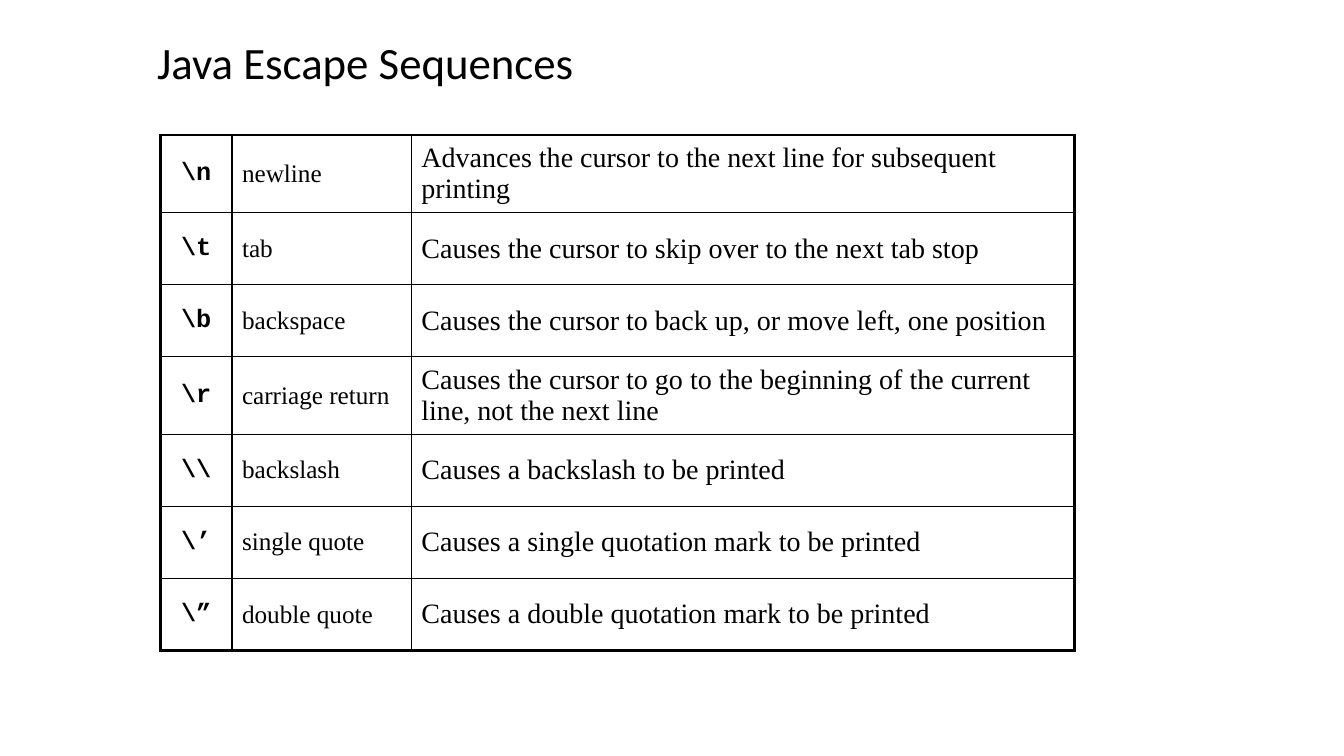
import pptx
import pptx.dml.color
import pptx.enum.text
import pptx.oxml.ns
import pptx.util
from lxml import etree

BLACK = pptx.dml.color.RGBColor(0x00, 0x00, 0x00)
SLIDE_WIDTH = pptx.util.Inches(13.33)
SLIDE_HEIGHT = pptx.util.Inches(7.5)
MIDDLE = pptx.enum.text.MSO_ANCHOR.MIDDLE
CENTER = pptx.enum.text.PP_ALIGN.CENTER

OUTER_LINE = 2.25
INNER_LINE = 1
COLUMN_SHARES = (5.33, 13.35, 49.35)
TALL_ROW = 10.27
ROW = 9.53

COLUMN_FORMATS = (
    {"font": "Courier New", "size": 18, "bold": True, "align": CENTER},
    {"font": "Times New Roman", "size": 18},
    {"font": "Times New Roman", "size": 20},
)

ESCAPES = (
    (TALL_ROW, r"\n", "newline", "Advances the cursor to the next line for subsequent printing"),
    (ROW, r"\t", "tab", "Causes the cursor to skip over to the next tab stop"),
    (ROW, r"\b", "backspace", "Causes the cursor to back up, or move left, one position"),
    (TALL_ROW, r"\r", "carriage return",
     "Causes the cursor to go to the beginning of the current line, not the next line"),
    (ROW, r"\\", "backslash", "Causes a backslash to be printed"),
    (ROW, r"\’", "single quote", "Causes a single quotation mark to be printed"),
    (ROW, r"\”", "double quote", "Causes a double quotation mark to be printed"),
)


def across(percent):
    """Return a share of the slide's width."""
    return round(SLIDE_WIDTH * percent / 100)


def down(percent):
    """Return a share of the slide's height."""
    return round(SLIDE_HEIGHT * percent / 100)


def write(frame, text, font, size, bold=False, align=None, spacing=None):
    """Put one formatted paragraph into a text frame."""
    frame.word_wrap = True
    paragraph = frame.paragraphs[0]
    paragraph.alignment = align
    paragraph.line_spacing = spacing
    run = paragraph.add_run()
    run.text = text
    run.font.name = font
    run.font.size = pptx.util.Pt(size)
    run.font.bold = bold
    run.font.color.rgb = BLACK


def rule_cell(cell, widths):
    """Draw the left, right, top and bottom borders of a cell."""
    properties = cell._tc.get_or_add_tcPr()
    for side, width in zip("LRTB", widths):
        line = etree.SubElement(properties, pptx.oxml.ns.qn(f"a:ln{side}"),
                                w=str(pptx.util.Pt(width)))
        fill = etree.SubElement(line, pptx.oxml.ns.qn("a:solidFill"))
        etree.SubElement(fill, pptx.oxml.ns.qn("a:srgbClr"), val=str(BLACK))


def add_heading(slide):
    """Add the slide's heading."""
    heading = slide.shapes.add_textbox(across(10.95), down(1.33), across(43.73), down(14.53))
    heading.text_frame.vertical_anchor = MIDDLE
    write(heading.text_frame, "Java Escape Sequences", font="Calibri", size=32, spacing=0.9)


def add_escape_table(slide):
    """Add the ruled table of escape sequences."""
    row_shares = [escape[0] for escape in ESCAPES]
    last_row, last_column = len(ESCAPES) - 1, len(COLUMN_SHARES) - 1
    escapes = slide.shapes.add_table(
        len(ESCAPES), len(COLUMN_SHARES), across(11.93), down(17.87),
        across(sum(COLUMN_SHARES)), down(sum(row_shares))).table
    escapes.first_row = escapes.horz_banding = False
    for column, share in zip(escapes.columns, COLUMN_SHARES):
        column.width = across(share)
    for r, (share, *texts) in enumerate(ESCAPES):
        escapes.rows[r].height = down(share)
        for c, text in enumerate(texts):
            cell = escapes.cell(r, c)
            edges = (c == 0, c == last_column, r == 0, r == last_row)
            rule_cell(cell, [OUTER_LINE if edge else INNER_LINE for edge in edges])
            cell.fill.background()
            cell.vertical_anchor = MIDDLE
            write(cell.text_frame, text, **COLUMN_FORMATS[c])


def main():
    """Build and save the slide."""
    deck = pptx.Presentation()
    deck.slide_width, deck.slide_height = SLIDE_WIDTH, SLIDE_HEIGHT
    slide = deck.slides.add_slide(deck.slide_layouts[6])
    add_heading(slide)
    add_escape_table(slide)
    deck.save("out.pptx")


if __name__ == "__main__":
    main()
